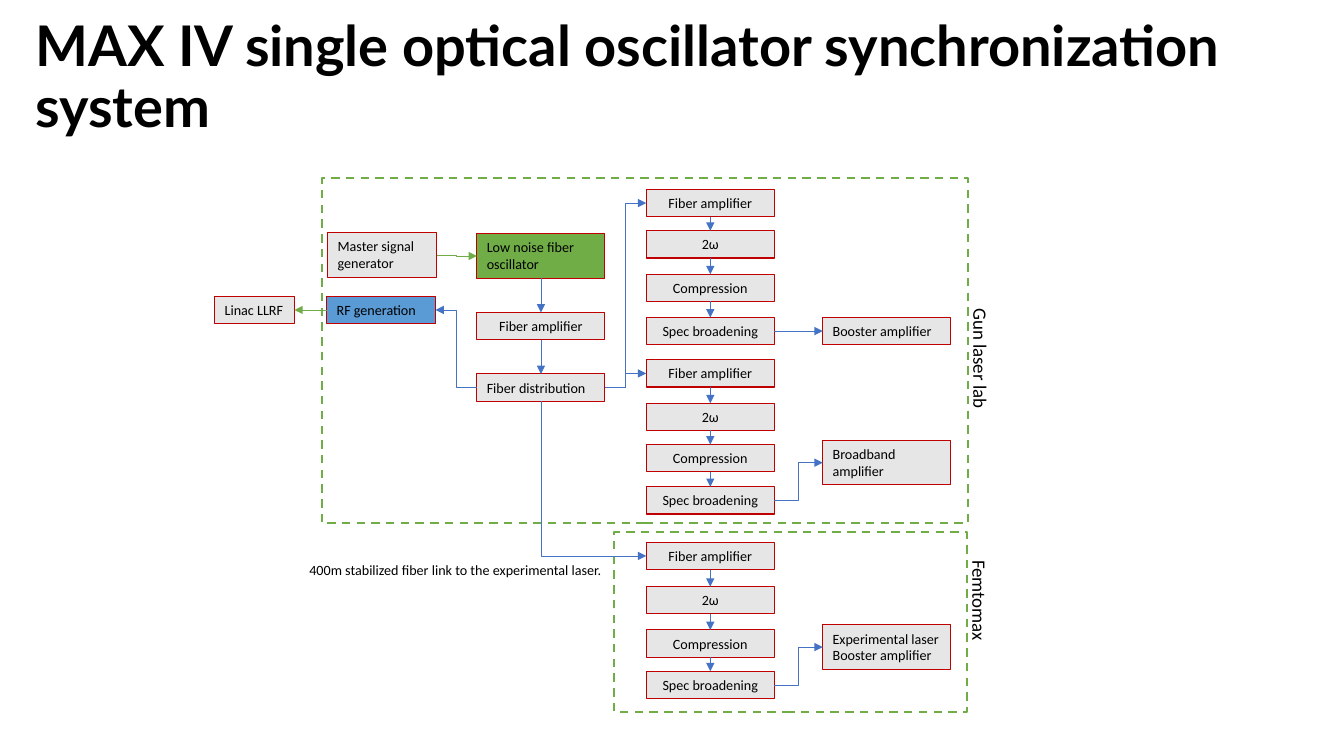
from lxml import etree
from pptx import Presentation
from pptx import util as u
from pptx.dml.color import RGBColor
from pptx.enum import dml, shapes, text
from pptx.oxml import ns

# Content: lengths in px, 100 px to the inch
SLIDE = (1333, 750)
TITLE = ("MAX IV single optical oscillator synchronization system", (25, 6, 1308, 145))

STAGES = ["Fiber amplifier", "2ω", "Compression", "Spec broadening"]
STAGE_LEFT, BOX_W, BOX_H, TALL_H = 641, 127, 27, 44
CHAIN_TOPS = {
    "gun 1": [188, 229, 272, 315],
    "gun 2": [357, 400, 441, 483],
    "femto": [538, 582, 625, 666],
}

# key: (words, (left, top, width, height), fill, alignment)
UNITS = {
    "reference": ("Master signal generator", (325, 231, 108, TALL_H), "box", "left"),
    "linac": ("Linac LLRF", (213, 294, 79, BOX_H), "box", "left"),
    "rf": ("RF generation", (324, 294, 108, BOX_H), "blue", "left"),
    "oscillator": ("Low noise fiber oscillator", (473, 232, BOX_W, TALL_H), "green", "left"),
    "preamp": ("Fiber amplifier", (473, 310, BOX_W, BOX_H), "box", "center"),
    "distribution": ("Fiber distribution", (473, 371, BOX_W, BOX_H), "box", "left"),
    "gun 1 out": ("Booster amplifier", (816, 315, BOX_W, BOX_H), "box", "left"),
    "gun 2 out": ("Broadband amplifier", (816, 437, BOX_W, TALL_H), "box", "left"),
    "femto out": ("Experimental laser\nBooster amplifier", (816, 620, BOX_W, TALL_H), "box", "left"),
}
ROOMS = [(319, 177, 641, 342), (609, 528, 350, 178)]
# words, place, size, rotation, wrap
LABELS = [
    ("400m stabilized fiber link to the experimental laser.", (297, 552, 313, 44), "body", 0, True),
    ("Gun laser lab", (912, 340, 121, 33), "room", 90, False),
    ("Femtomax", (921, 580, 101, 33), "room", 90, False),
]
TOP, LEFT, BOTTOM, RIGHT = range(4)
# from, side, to, side, route, colour
LINKS = [
    ("reference", RIGHT, "oscillator", LEFT, "bent", "green"),
    ("rf", LEFT, "linac", RIGHT, "straight", "green"),
    ("oscillator", BOTTOM, "preamp", TOP, "straight", "link"),
    ("preamp", BOTTOM, "distribution", TOP, "straight", "link"),
    ("distribution", LEFT, "rf", RIGHT, "bent", "link"),
    ("distribution", RIGHT, "gun 1 0", LEFT, "bent", "link"),
    ("distribution", RIGHT, "gun 2 0", LEFT, "bent", "link"),
    ("distribution", BOTTOM, "femto 0", LEFT, "corner", "link"),
    ("gun 1 3", RIGHT, "gun 1 out", LEFT, "straight", "link"),
    ("gun 2 3", RIGHT, "gun 2 out", LEFT, "bent", "link"),
    ("femto 3", RIGHT, "femto out", LEFT, "bent", "link"),
]


class Theme:
    colours = {"text": "000000", "box": "E7E6E6", "edge": "C00000",
               "green": "70AD47", "blue": "5B9BD5", "link": "4472C4"}
    sizes = {"title": 40, "body": 10.1, "room": 13.5}
    lines = {"box": 0.75, "link": 0.5, "room": 1.5}
    fonts = {"title": "Lato", "body": "Calibri"}
    align = {"left": text.PP_ALIGN.LEFT, "center": text.PP_ALIGN.CENTER}


def px(*lengths):
    return [u.Emu(round(length * 9144)) for length in lengths]


def rgb(name):
    return RGBColor.from_string(Theme.colours[name])


def write(frame, words, size="body", align="left", font="body", bold=False, **frame_format):
    frame.text = words
    for name, value in frame_format.items():
        setattr(frame, name, value)
    look = {"name": Theme.fonts[font], "size": u.Pt(Theme.sizes[size]), "bold": bold}
    for paragraph in frame.paragraphs:
        paragraph.alignment = Theme.align[align]
        for run in paragraph.runs:
            for name, value in look.items():
                setattr(run.font, name, value)
            run.font.color.rgb = rgb("text")


def stroke(line, colour, width):
    line.color.rgb = rgb(colour)
    line.width = u.Pt(Theme.lines[width])


def add_rect(slide, place, edge, width):
    rect = slide.shapes.add_shape(shapes.MSO_SHAPE.RECTANGLE, *px(*place))
    rect.shadow.inherit = False
    stroke(rect.line, edge, width)
    return rect


def add_unit(slide, words, place, fill, align):
    unit = add_rect(slide, place, "edge", "box")
    unit.fill.solid()
    unit.fill.fore_color.rgb = rgb(fill)
    write(unit.text_frame, words, align=align, word_wrap=True,
          vertical_anchor=text.MSO_ANCHOR.TOP,
          auto_size=text.MSO_AUTO_SIZE.SHAPE_TO_FIT_TEXT)
    return unit


def turn_corner(link):
    """Make an elbow that runs down first, then right."""
    across, down = link.width, link.height
    centre_x, centre_y = link.left + across // 2, link.top + down // 2
    place = {"left": centre_x - down // 2, "top": centre_y - across // 2,
             "width": down, "height": across}
    for name, value in place.items():
        setattr(link, name, u.Emu(value))
    frame = link._element.spPr.find(ns.qn("a:xfrm"))
    frame.set("rot", str(270 * 60000))
    frame.set("flipH", "1")
    link._element.spPr.find(ns.qn("a:prstGeom")).set("prst", "bentConnector2")


def add_link(slide, units, source, source_side, target, target_side, route, colour):
    kinds = shapes.MSO_CONNECTOR
    kind = kinds.STRAIGHT if route == "straight" else kinds.ELBOW
    link = slide.shapes.add_connector(kind, 0, 0, 0, 0)
    link.begin_connect(units[source], source_side)
    link.end_connect(units[target], target_side)
    if route == "corner":
        turn_corner(link)
    stroke(link.line, colour, "link")
    etree.SubElement(link.line._get_or_add_ln(), ns.qn("a:tailEnd"), type="triangle")
    etree.SubElement(link._element.spPr, ns.qn("a:effectLst"))


def main():
    deck = Presentation()
    deck.slide_width, deck.slide_height = px(*SLIDE)
    slide = deck.slides.add_slide(deck.slide_layouts[5])

    # Title
    words, place = TITLE
    title = slide.shapes.title
    title.left, title.top, title.width, title.height = px(*place)
    write(title.text_frame, words, "title", font="title", bold=True, word_wrap=True,
          vertical_anchor=text.MSO_ANCHOR.MIDDLE, auto_size=text.MSO_AUTO_SIZE.NONE)
    title.text_frame.paragraphs[0].line_spacing = 0.9

    # Rooms
    for place in ROOMS:
        room = add_rect(slide, place, "green", "room")
        room.fill.background()
        room.line.dash_style = dml.MSO_LINE.DASH

    # Units and the three amplifier chains
    units = {key: add_unit(slide, *unit) for key, unit in UNITS.items()}
    links = list(LINKS)
    for chain, tops in CHAIN_TOPS.items():
        for step, (stage, top) in enumerate(zip(STAGES, tops)):
            units[f"{chain} {step}"] = add_unit(
                slide, stage, (STAGE_LEFT, top, BOX_W, BOX_H), "box", "center")
            if step:
                links.append((f"{chain} {step - 1}", BOTTOM, f"{chain} {step}", TOP,
                              "straight", "link"))

    # Arrows
    for link in links:
        add_link(slide, units, *link)

    # Labels
    for words, place, size, rotation, wrap in LABELS:
        label = slide.shapes.add_textbox(*px(*place))
        label.rotation = rotation
        write(label.text_frame, words, size, word_wrap=wrap,
              auto_size=text.MSO_AUTO_SIZE.SHAPE_TO_FIT_TEXT)

    deck.save("out.pptx")


if __name__ == "__main__":
    main()
